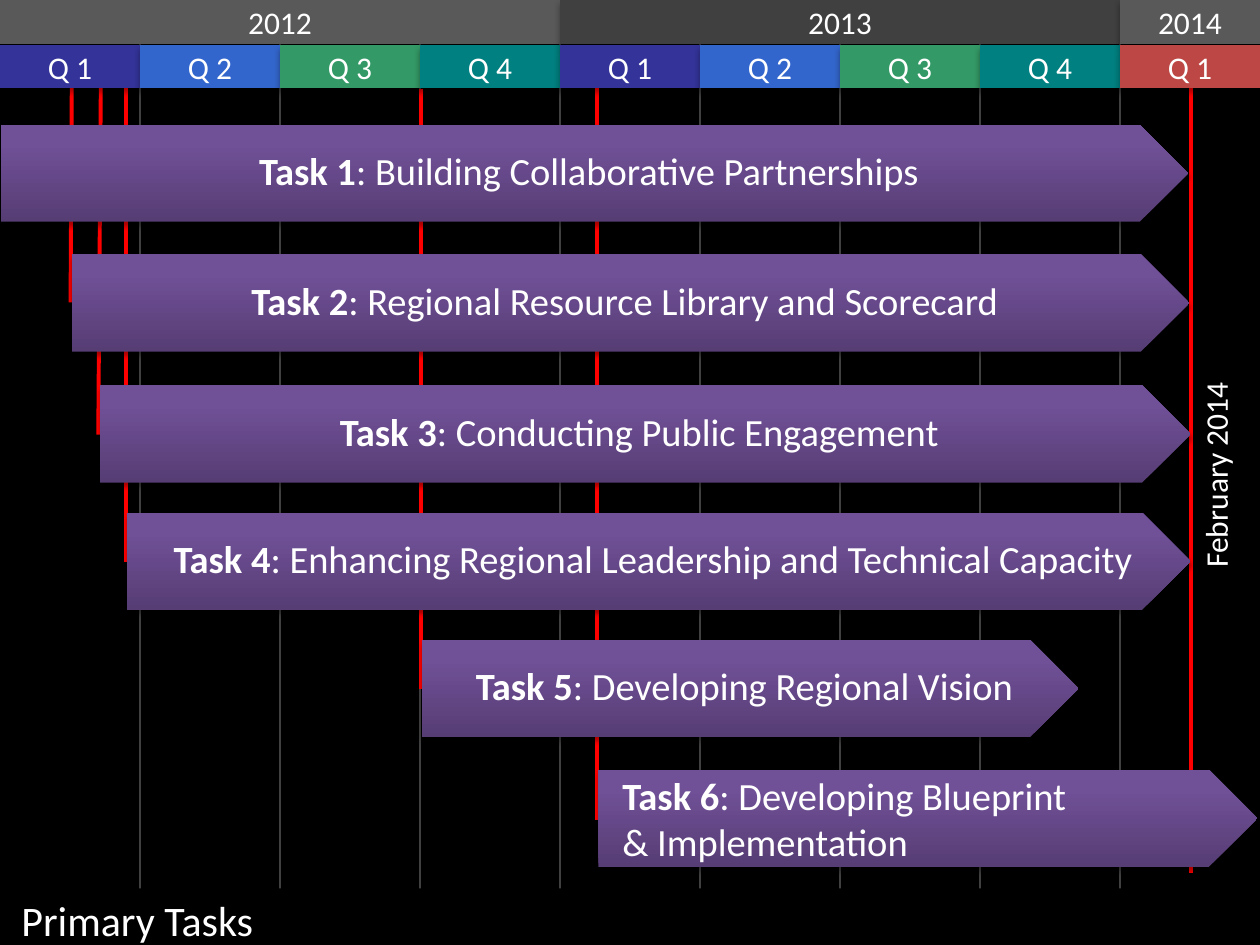
from copy import deepcopy
from dataclasses import dataclass

from pptx import Presentation
from pptx.dml.color import RGBColor
from pptx.enum.shapes import MSO_CONNECTOR, MSO_SHAPE
from pptx.enum.text import MSO_ANCHOR, PP_ALIGN
from pptx.oxml import parse_xml
from pptx.oxml.ns import nsdecls, qn
from pptx.util import Inches, Pt


@dataclass(frozen=True)
class Theme:
    """Hold the colours, the font and the type sizes."""
    font: str = "Calibri"
    back: str = "000000"
    text: str = "FFFFFF"
    grid: str = "404040"
    mark: str = "FF0000"
    years: tuple = ("595959", "404040", "595959")
    terms: tuple = ("333399", "3366CC", "339966", "008080")
    last: str = "BC4744"
    blend: tuple = ((0, "563D74"), (0.8, "705097"), (1, "704F99"))
    label: int = 18
    task: int = 22
    title: int = 24


THEME = Theme()
STEP = 10 / 9
PLATE = 0.77

TASKS = [
    (0.01, 0.99, 9.42, [[("Task 1", True), (": Building Collaborative Partnerships", False)]]),
    (0.57, 2.02, 8.87, [[("Task 2", True), (": Regional Resource Library and Scorecard", False)]]),
    (0.79, 3.06, 8.66, [[("Task 3", True), (": Conducting Public Engagement", False)]]),
    (1.01, 4.07, 8.44, [[("Task 4", True),
                         (": Enhancing Regional Leadership and Technical Capacity", False)]]),
    (3.35, 5.08, 5.21, [[("Task 5", True), (": Developing Regional Vision", False)]]),
]
FINAL = (4.75, 6.11, 5.23, [[("Task 6", True), (": Developing Blueprint", False)],
                            [("& Implementation", False)]])
MARKS = [
    (9.45, 0.69, 9.45, 6.93),
    (4.74, 0.69, 4.74, 6.51),
    (3.34, 0.71, 3.34, 5.47),
    (1, 0.69, 1, 4.46),
    (0.8, 0.69, 0.78, 3.45),
    (0.57, 0.66, 0.56, 2.4),
]


def paint(color):
    """Turn a hex string into a colour."""
    return RGBColor.from_string(color)


def add_line(slide, ends, color, width):
    """Draw a plain straight line between two points."""
    line = slide.shapes.add_connector(MSO_CONNECTOR.STRAIGHT, *map(Inches, ends))
    line.line.color.rgb = paint(color)
    line.line.width = Pt(width)
    line._element.spPr.append(parse_xml(f"<a:effectLst {nsdecls('a')}/>"))


def add_text(shape, lines, size, align=PP_ALIGN.LEFT, anchor=MSO_ANCHOR.MIDDLE,
             inset=(0.1, 0.05, 0.1, 0.05), space=1.0):
    """Write lines of (text, bold) runs into a shape."""
    frame = shape.text_frame
    frame.word_wrap = True
    frame.vertical_anchor = anchor
    (frame.margin_left, frame.margin_top,
     frame.margin_right, frame.margin_bottom) = map(Inches, inset)
    for row, parts in enumerate(lines):
        para = frame.add_paragraph() if row else frame.paragraphs[0]
        para.alignment = align
        para.line_spacing = space
        for words, bold in parts:
            run = para.add_run()
            run.text = words
            run.font.name = THEME.font
            run.font.size = Pt(size)
            run.font.bold = bold
            run.font.color.rgb = paint(THEME.text)


def add_shade(shape, alpha, blur, gap):
    """Cast a soft shadow straight down."""
    shape.shadow.inherit = False
    shape._element.spPr.find(qn("a:effectLst")).append(parse_xml(
        f'<a:outerShdw {nsdecls("a")} blurRad="{Pt(blur)}" dist="{Pt(gap)}" dir="5400000" '
        f'rotWithShape="0"><a:srgbClr val="000000"><a:alpha val="{alpha * 1000}"/>'
        '</a:srgbClr></a:outerShdw>'))


def add_cell(slide, box, color, words):
    """Add one header cell with centred text."""
    cell = slide.shapes.add_shape(MSO_SHAPE.FLOWCHART_PROCESS, *map(Inches, box))
    cell.fill.solid()
    cell.fill.fore_color.rgb = paint(color)
    cell.line.fill.background()
    add_shade(cell, 32, 3.5, 2.2)
    add_text(cell, [[(words, False)]], THEME.label, PP_ALIGN.CENTER)


def add_head(slide, left, top):
    """Add the rows of years and quarters."""
    for year, color in enumerate(THEME.years):
        start = left + 4 * year * STEP
        count = 4 if year < 2 else 1
        add_cell(slide, (start, top, count * STEP, 0.35), color, str(2012 + year))
        for term in range(count):
            shade = THEME.terms[term] if year < 2 else THEME.last
            add_cell(slide, (start + term * STEP, top + 0.36, STEP, 0.34),
                     shade, f"Q {term + 1}")


def add_grid(slide, top, base):
    """Add the quarter lines and the red marks."""
    for term in range(1, 9):
        add_line(slide, (term * STEP, top, term * STEP, base), THEME.grid, 0.75)
    for ends in MARKS:
        add_line(slide, ends, THEME.mark, 2.25)


def add_task(slide, box, lines, **style):
    """Add one task arrow with its text."""
    plate = slide.shapes.add_shape(MSO_SHAPE.PENTAGON, *map(Inches, box))
    plate.fill.gradient()
    stops = plate._element.spPr.find(qn("a:gradFill")).find(qn("a:gsLst"))
    stops.append(deepcopy(stops[-1]))
    for stop, (place, color) in zip(plate.fill.gradient_stops, THEME.blend):
        stop.position = place
        stop.color.rgb = paint(color)
    plate.fill.gradient_angle = 90
    plate.line.fill.background()
    add_shade(plate, 35, 3.1, 1.8)
    add_text(plate, lines, THEME.task, **style)


def add_title(slide, box):
    """Add the title strip at the foot."""
    strip = slide.shapes.add_shape(MSO_SHAPE.RECTANGLE, *map(Inches, box))
    strip.shadow.inherit = False
    strip.fill.solid()
    strip.fill.fore_color.rgb = paint(THEME.back)
    strip.line.fill.background()
    add_text(strip, [[("Primary Tasks", False)]], THEME.title,
             anchor=MSO_ANCHOR.TOP, inset=(0.17, 0.05, 0.1, 0.05))


def add_date(slide, box):
    """Add the upright date beside the end mark."""
    label = slide.shapes.add_textbox(*map(Inches, box))
    label.rotation = 270
    add_text(label, [[("February 2014", False)]], THEME.label,
             anchor=MSO_ANCHOR.TOP, inset=(0.17, 0.05, 0.1, 0.05))


def main():
    """Build the timeline slide and save it."""
    deck = Presentation()
    deck.slide_width, deck.slide_height = Inches(10), Inches(7.5)
    slide = deck.slides.add_slide(deck.slide_layouts[6])
    slide.background.fill.solid()
    slide.background.fill.fore_color.rgb = paint(THEME.back)
    add_grid(slide, 0.35, 7.5)
    add_title(slide, (0, 7.05, 10, 0.51))
    add_head(slide, 0, 0)
    for left, top, width, lines in reversed(TASKS):
        add_task(slide, (left, top, width, PLATE), lines, align=PP_ALIGN.CENTER,
                 inset=(0.13, 0.06, 0.03, 0.06), space=0.9)
    add_date(slide, (7.9, 2.73, 3.49, 0.4))
    left, top, width, lines = FINAL
    add_task(slide, (left, top, width, PLATE), lines, inset=(0.19, 0, 0.1, 0))
    deck.save("out.pptx")


if __name__ == "__main__":
    main()
